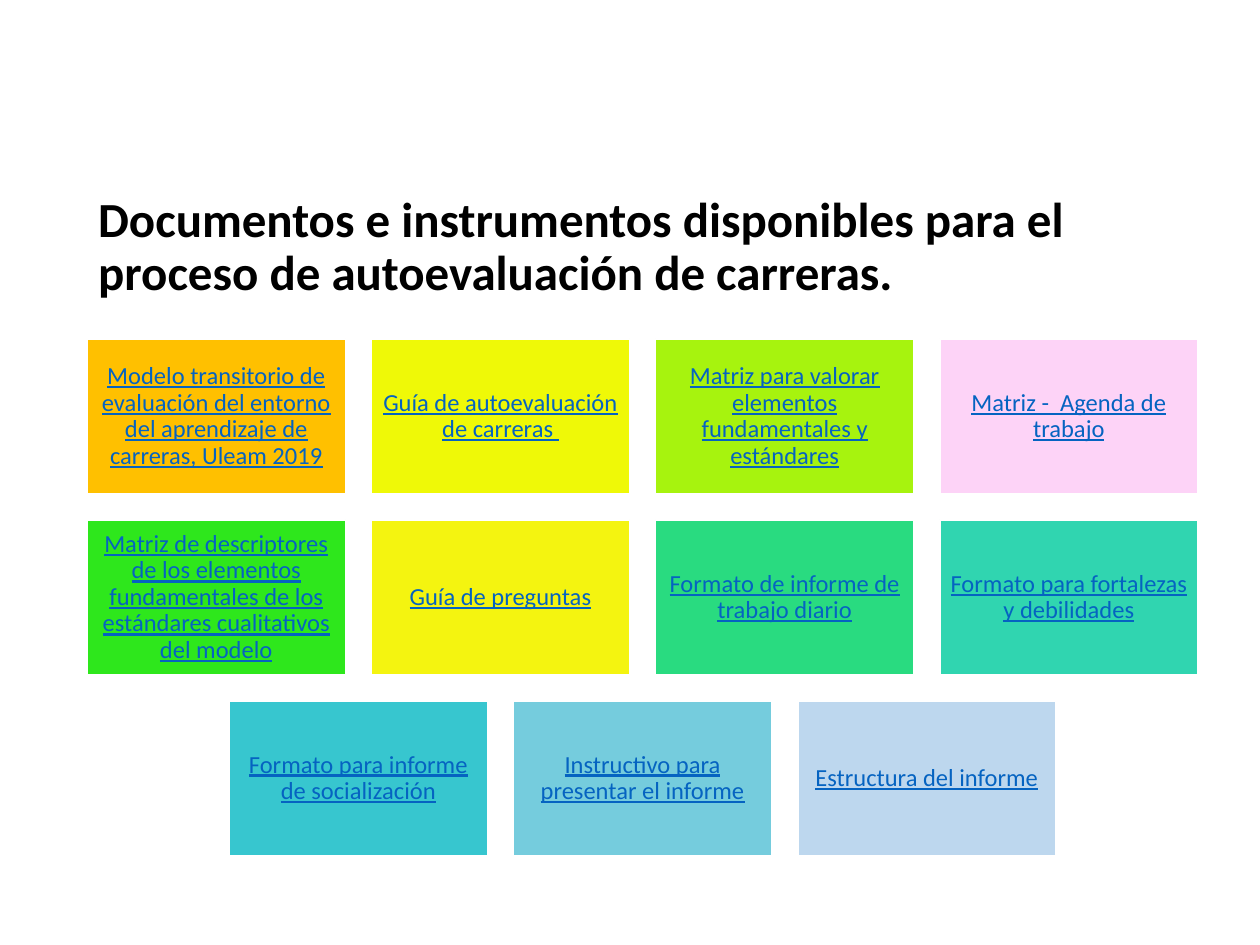
from dataclasses import dataclass

from pptx import Presentation
from pptx.dml.color import RGBColor
from pptx.enum.shapes import MSO_SHAPE
from pptx.enum.text import MSO_ANCHOR, PP_ALIGN
from pptx.util import Pt

RECTANGLE = MSO_SHAPE.RECTANGLE
MIDDLE = MSO_ANCHOR.MIDDLE
LEFT, CENTER = PP_ALIGN.LEFT, PP_ALIGN.CENTER


@dataclass(frozen=True)
class Theme:
    font: str = "Calibri"
    title_size: int = 28
    card_size: int = 14
    title_color: str = "000000"
    link_color: str = "0563C1"
    border_color: str = "FFFFFF"
    line_spacing: float = 0.9


THEME = Theme()

TITLE = "Documentos e instrumentos disponibles para el proceso de autoevaluación de carreras."

# Each row holds (document, fill colour) pairs
DOCUMENT_ROWS = [
    [
        ("Modelo transitorio de evaluación del entorno del aprendizaje de carreras, Uleam 2019", "FFC000"),
        ("Guía de autoevaluación de carreras ", "EFF907"),
        ("Matriz para valorar elementos fundamentales y estándares", "A7F30E"),
        ("Matriz -  Agenda de trabajo", "FDD3F7"),
    ],
    [
        ("Matriz de descriptores de los elementos fundamentales de los estándares cualitativos del modelo", "2EE71C"),
        ("Guía de preguntas", "F4F410"),
        ("Formato de informe de trabajo diario", "29DB80"),
        ("Formato para fortalezas y debilidades", "30D5B0"),
    ],
    [
        ("Formato para informe de socialización", "37C6CF"),
        ("Instructivo para presentar el informe", "75CCDD"),
        ("Estructura del informe", "BDD7EE"),
    ],
]

# Card grid, in points
CARD_WIDTH, CARD_HEIGHT = 147.6, 88.6
GAP = 14.8
GRID_CENTER, GRID_TOP = 367.2, 193.7
CARD_INSET = 4.2


def write_text(frame, text, size, color, alignment):
    frame.word_wrap = True
    frame.vertical_anchor = MIDDLE
    paragraph = frame.paragraphs[0]
    paragraph.text = text
    paragraph.alignment = alignment
    paragraph.line_spacing = THEME.line_spacing
    paragraph.font.name = THEME.font
    paragraph.font.size = Pt(size)
    paragraph.font.color.rgb = RGBColor.from_string(color)
    return paragraph


def add_title(slide):
    title = slide.shapes.add_textbox(Pt(49), Pt(108), Pt(620.6), Pt(67.7))
    heading = write_text(title.text_frame, TITLE, THEME.title_size, THEME.title_color, LEFT)
    heading.font.bold = True


def add_card(slide, left, top, document, fill_color):
    card = slide.shapes.add_shape(RECTANGLE, Pt(left), Pt(top), Pt(CARD_WIDTH), Pt(CARD_HEIGHT))
    card.shadow.inherit = False
    card.fill.solid()
    card.fill.fore_color.rgb = RGBColor.from_string(fill_color)
    card.line.color.rgb = RGBColor.from_string(THEME.border_color)
    card.line.width = Pt(1)
    frame = card.text_frame
    frame.margin_left = frame.margin_right = Pt(CARD_INSET)
    frame.margin_top = frame.margin_bottom = Pt(CARD_INSET)
    label = write_text(frame, document, THEME.card_size, THEME.link_color, CENTER)
    label.font.underline = True


def add_card_rows(slide):
    """Lay the cards out in rows, each centred on the grid."""
    for row_index, documents in enumerate(DOCUMENT_ROWS):
        top = GRID_TOP + row_index * (CARD_HEIGHT + GAP)
        row_width = len(documents) * (CARD_WIDTH + GAP) - GAP
        row_left = GRID_CENTER - row_width / 2
        for column, (document, fill_color) in enumerate(documents):
            left = row_left + column * (CARD_WIDTH + GAP)
            add_card(slide, left, top, document, fill_color)


def main():
    presentation = Presentation()
    presentation.slide_width = Pt(720)
    presentation.slide_height = Pt(540)
    slide = presentation.slides.add_slide(presentation.slide_layouts[6])
    add_title(slide)
    add_card_rows(slide)
    presentation.save("out.pptx")


if __name__ == "__main__":
    main()
